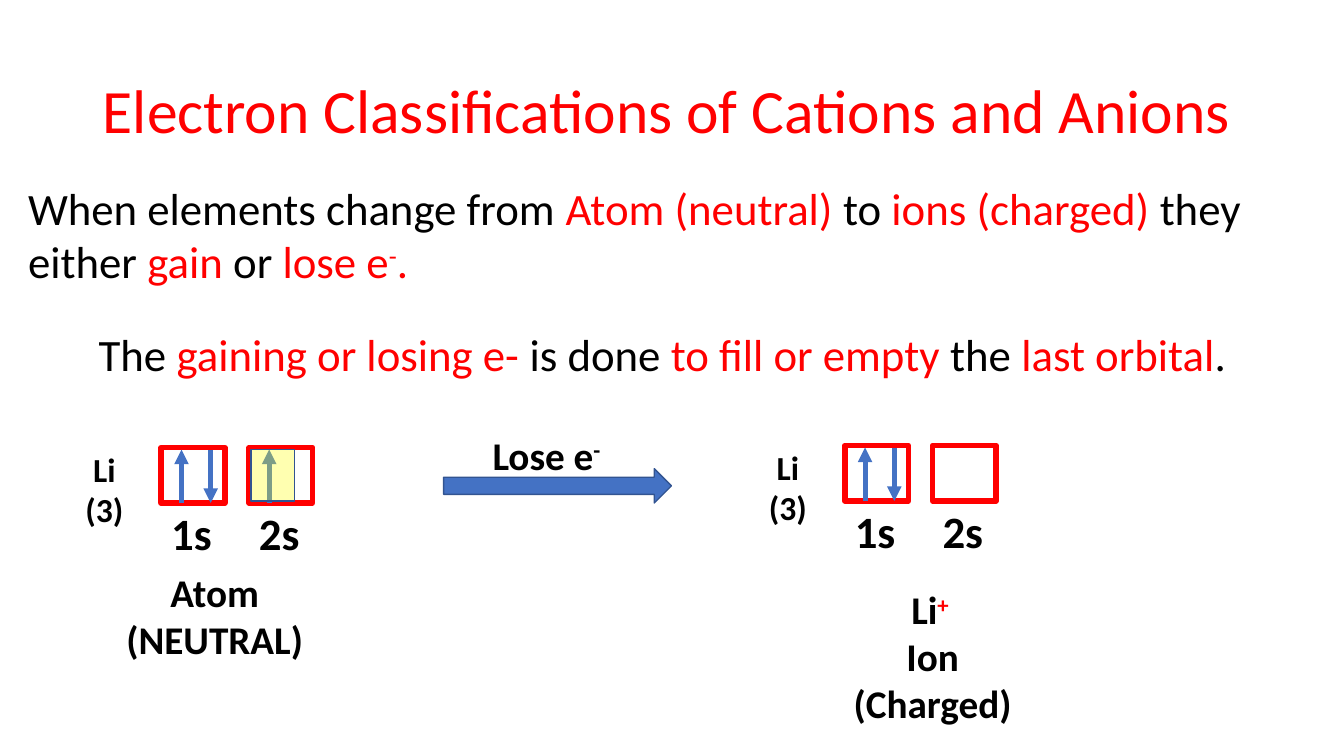
from typing import NamedTuple

from lxml import etree
from pptx import Presentation
from pptx.dml.color import RGBColor
from pptx.enum.shapes import MSO_CONNECTOR, MSO_SHAPE
from pptx.enum.text import MSO_ANCHOR, MSO_AUTO_SIZE, PP_ALIGN
from pptx.oxml.ns import qn
from pptx.util import Pt

RECT = MSO_SHAPE.RECTANGLE
ARROW = MSO_SHAPE.RIGHT_ARROW
LINE = MSO_CONNECTOR.STRAIGHT
LEFT = PP_ALIGN.LEFT
MID = PP_ALIGN.CENTER
CENTRE = MSO_ANCHOR.MIDDLE
GROW = MSO_AUTO_SIZE.SHAPE_TO_FIT_TEXT
KEEP = MSO_AUTO_SIZE.NONE

RED = RGBColor(0xFF, 0, 0)
BLACK = RGBColor(0, 0, 0)
BLUE = RGBColor(0x44, 0x72, 0xC4)
NAVY = RGBColor(0x32, 0x54, 0x91)
YELLOW = RGBColor(0xFF, 0xFF, 0)

FONT = "Calibri"
SCALE = 9144
SIDE = 63
DEEP = 55
UP_X = 20
DOWN_X = 49


class Box(NamedTuple):
    x: int
    y: int
    w: int
    h: int


class Part(NamedTuple):
    text: str
    color: RGBColor = BLACK
    high: bool = False


class Cell(NamedTuple):
    name: str
    up: bool
    down: bool


class Atom(NamedTuple):
    x: int
    y: int
    cells: tuple[Cell, ...]


class Note(NamedTuple):
    box: Box
    size: int
    bold: bool
    align: PP_ALIGN
    lines: tuple[tuple[Part, ...], ...]


INTRO = (
    Note(Box(18, 174, 1245, 118), 32, False, LEFT, ((
        Part("When elements change from "), Part("Atom (neutral) ", RED),
        Part("to "), Part("ions (charged) ", RED), Part("they either "),
        Part("gain ", RED), Part("or"), Part(" lose e", RED),
        Part("-", RED, True), Part(".", RED)),)),
    Note(Box(88, 319, 1245, 64), 32, False, LEFT, ((
        Part("The "), Part("gaining or losing e- ", RED), Part("is done "),
        Part("to fill or empty ", RED), Part("the "),
        Part("last orbital", RED), Part(".")),)),
)
ATOMS = (
    Atom(72, 440, (Cell("1s", True, True), Cell("2s", True, False))),
    Atom(750, 438, (Cell("1s", True, True), Cell("2s", False, False))),
)
LABELS = (
    Note(Box(110, 559, 206, 104), 28, True, MID, ((Part("Atom (NEUTRAL)"),),)),
    Note(Box(439, 423, 206, 57), 28, True, MID,
         ((Part("Lose e"), Part("-", BLACK, True)),)),
    Note(Box(822, 576, 206, 151), 28, True, MID,
         ((Part("Li"), Part("+ ", RED, True)), (Part("Ion (Charged)"),))),
)


def px(*nums: int) -> list[int]:
    return [num * SCALE for num in nums]


def write(frame, note: Note) -> None:
    frame.word_wrap = True
    for i, line in enumerate(note.lines):
        para = frame.add_paragraph() if i else frame.paragraphs[0]
        para.alignment = note.align
        for part in line:
            run = para.add_run()
            run.text = part.text
            run.font.name = FONT
            run.font.size = Pt(note.size)
            run.font.bold = note.bold
            run.font.color.rgb = part.color
            if part.high:
                run.font._element.set("baseline", "30000")


def add_note(slide, note: Note) -> None:
    frame = slide.shapes.add_textbox(*px(*note.box)).text_frame
    write(frame, note)
    frame.auto_size = GROW


def add_form(slide, kind: MSO_SHAPE, box: Box, edge: RGBColor, width: int,
             fill: RGBColor | None = None, alpha: int = 100) -> None:
    shape = slide.shapes.add_shape(kind, *px(*box))
    shape.shadow.inherit = False
    shape.line.color.rgb = edge
    shape.line.width = Pt(width)
    if fill is None:
        shape.fill.background()
        return
    shape.fill.solid()
    shape.fill.fore_color.rgb = fill
    if alpha < 100:
        tint = shape._element.spPr.find(f"{qn('a:solidFill')}/{qn('a:srgbClr')}")
        etree.SubElement(tint, qn("a:alpha"), val=str(alpha * 1000))


def add_spin(slide, x: int, start: int, end: int) -> None:
    spin = slide.shapes.add_connector(LINE, *px(x, start, x, end))
    spin.line.color.rgb = BLUE
    spin.line.width = Pt(3.5)
    etree.SubElement(spin.line._get_or_add_ln(), qn("a:tailEnd"), type="triangle")
    etree.SubElement(spin._element.spPr, qn("a:effectLst"))


def add_atom(slide, atom: Atom) -> None:
    add_note(slide, Note(Box(atom.x, atom.y, SIDE, 91), 24, True, MID,
                         ((Part("Li (3)"),),)))
    top, low = atom.y + 6, atom.y + 59
    for i, cell in enumerate(atom.cells):
        x = atom.x + 88 + 87 * i
        add_form(slide, RECT, Box(x, atom.y + 4, SIDE, DEEP), RED, 4)
        add_note(slide, Note(Box(x, atom.y + 57, SIDE, 64), 32, True, LEFT,
                             ((Part(cell.name),),)))
        if cell.up:
            add_spin(slide, x + UP_X, low, top)
        if cell.down:
            add_spin(slide, x + DOWN_X, top, low)


def main() -> None:
    deck = Presentation()
    deck.slide_width, deck.slide_height = px(1333, 750)
    slide = deck.slides.add_slide(deck.slide_layouts[5])
    title = slide.shapes.title
    area = Box(92, 40, 1150, 145)
    title.left, title.top, title.width, title.height = px(*area)
    frame = title.text_frame
    write(frame, Note(area, 44, False, LEFT,
                      ((Part("Electron Classifications of Cations and Anions", RED),),)))
    frame.paragraphs[0].line_spacing = 0.9
    frame.vertical_anchor = CENTRE
    frame.auto_size = KEEP
    for note in INTRO:
        add_note(slide, note)
    for atom in ATOMS:
        add_atom(slide, atom)
    add_form(slide, ARROW, Box(440, 465, 226, 34), NAVY, 1, BLUE)
    add_form(slide, RECT, Box(249, 446, 43, 51), NAVY, 1, YELLOW, 31)
    for note in LABELS:
        add_note(slide, note)
    deck.save("out.pptx")


if __name__ == "__main__":
    main()
